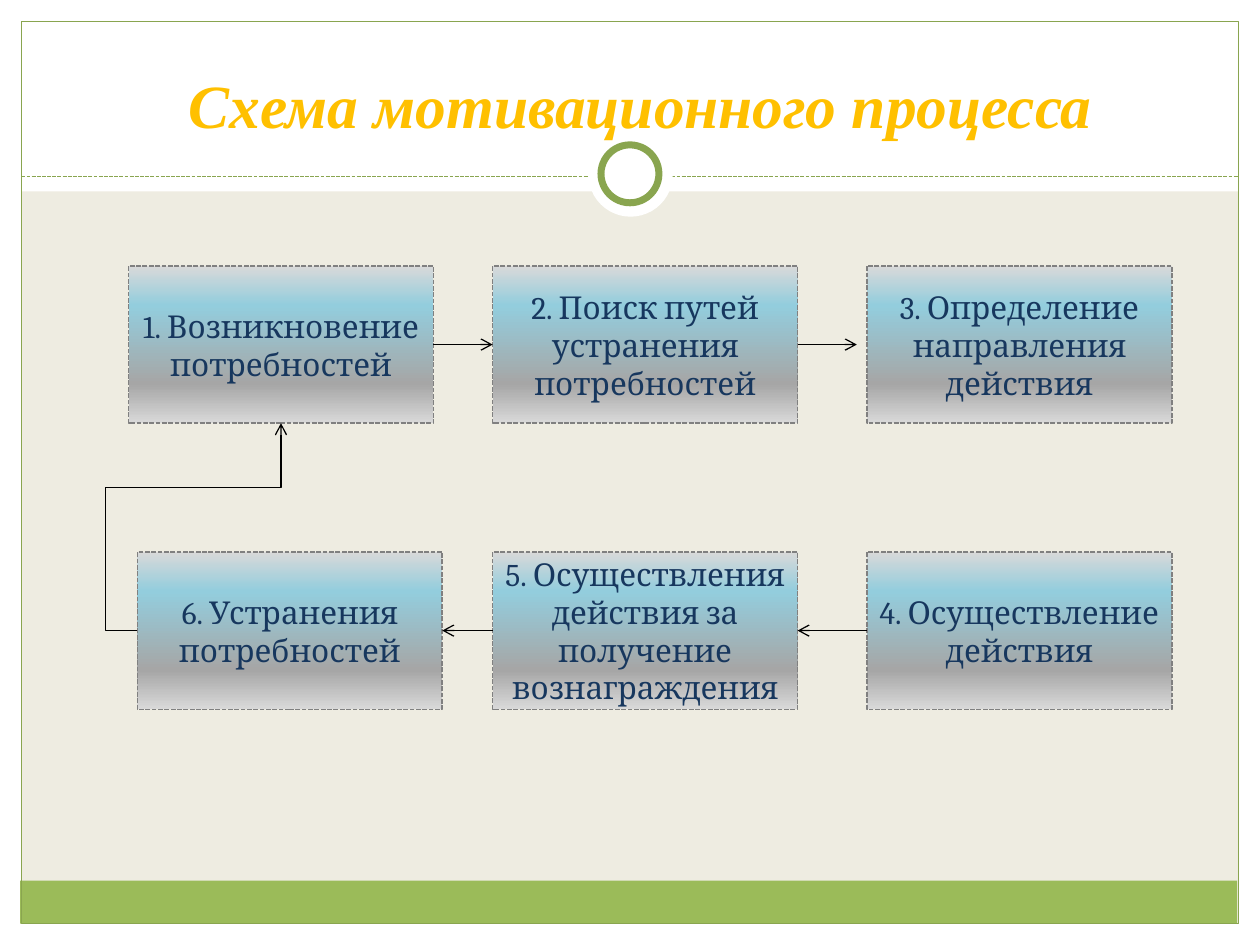
"""Build the slide with the six-step cycle of the motivation process."""
from lxml.etree import SubElement
from pptx import Presentation
from pptx.dml.color import RGBColor
from pptx.enum.dml import MSO_LINE
from pptx.enum.shapes import MSO_CONNECTOR as LINK, MSO_SHAPE as SHAPE
from pptx.enum.text import MSO_ANCHOR as ANCHOR, PP_ALIGN as ALIGN
from pptx.oxml import parse_xml
from pptx.oxml.ns import nsdecls, qn
from pptx.util import Inches, Pt

UNIT = Inches(0.1)
COLUMNS, ROWS = 100, 75
WHITE, GREEN, EDGE = "FFFFFF", "9BBB59", "89A54F"
BOX_W, BOX_H = 24.2, 12.5
LEFT, MIDDLE, RIGHT = 10.2, 39.1, 68.8
TOP, BOTTOM = 21.1, 43.8


def paint(target, colour):
    """Give a fill or a font a solid colour."""
    if hasattr(target, "solid"):
        target.solid()
        target.fore_color.rgb = RGBColor.from_string(colour)
    else:
        target.color.rgb = RGBColor.from_string(colour)


def add_panel(kind, cells, fill=None, edge=None, weight=0.75):
    """Add a preset shape at left, top, width and height in grid cells."""
    panel = slide.shapes.add_shape(kind, *[round(n * UNIT) for n in cells])
    panel.shadow.inherit = False
    for part, colour in ((panel.fill, fill), (panel.line.fill, edge)):
        if colour:
            paint(part, colour)
        else:
            part.background()
    if edge:
        panel.line.width = Pt(weight)
    return panel


deck = Presentation()
deck.slide_width, deck.slide_height = COLUMNS * UNIT, ROWS * UNIT
slide = deck.slides.add_slide(deck.slide_layouts[5])
paint(slide.background.fill, "EEECE1")

for cells, fill in (
    ((0, 73.3, COLUMNS, 1.7), WHITE),
    ((0, 0, COLUMNS, 15.2), WHITE),
    ((0, 0, 1.7, ROWS), WHITE),
    ((98.3, 0, 1.7, ROWS), WHITE),
    ((1.6, 69.9, 96.6, 3.4), GREEN),
):
    add_panel(SHAPE.RECTANGLE, cells, fill)
add_panel(SHAPE.RECTANGLE, (1.7, 1.7, 96.6, 71.6), edge=EDGE)

divider = slide.shapes.add_connector(
    LINK.STRAIGHT, *[round(n * UNIT) for n in (1.7, 14, 98.3, 14)])
paint(divider.line.fill, EDGE)
divider.line.width = Pt(0.75)
divider.line.dash_style = MSO_LINE.SQUARE_DOT
SubElement(divider._element.spPr, qn("a:effectLst"))
add_panel(SHAPE.OVAL, (46.7, 10.5, 6.7, 6.7), WHITE)
add_panel(SHAPE.OVAL, (47.7, 11.5, 4.6, 4.6), WHITE, EDGE, 4)

title = slide.shapes.title
title.left, title.top, title.width, title.height = [
    round(n * UNIT) for n in (5.5, 3.1, 90.6, 8.6)]
slide.shapes._spTree.append(title._element)
title.text_frame.vertical_anchor = ANCHOR.BOTTOM
heading = title.text_frame.paragraphs[0]
heading.alignment = ALIGN.CENTER
words = heading.add_run()
words.text = "Схема мотивационного процесса"
words.font.name, words.font.size = "Times New Roman", Pt(35.1)
words.font.bold = words.font.italic = True
paint(words.font, "FFC000")

stops = "".join(
    f'<a:gs pos="{share * 1000}"><a:srgbClr val="{colour}"/></a:gs>'
    for share, colour in ((0, "D9D9D9"), (25, "A6A6A6"), (75, "93CDDD"), (100, "D9D9D9")))
steps = []
for left, top, label in (
    (LEFT, TOP, "1. Возникновение потребностей"),
    (MIDDLE, TOP, "2. Поиск путей устранения потребностей"),
    (RIGHT, TOP, "3. Определение направления действия"),
    (RIGHT, BOTTOM, "4. Осуществление действия"),
    (MIDDLE, BOTTOM, "5. Осуществления действия за получение вознаграждения"),
    (LEFT + 0.7, BOTTOM, "6. Устранения потребностей"),
):
    step = add_panel(SHAPE.RECTANGLE, (left, top, BOX_W, BOX_H), WHITE, "808080", 0.9)
    step.line.dash_style = MSO_LINE.SQUARE_DOT
    properties = step._element.spPr
    properties.replace(properties.find(qn("a:solidFill")), parse_xml(
        f'<a:gradFill {nsdecls("a")} rotWithShape="1"><a:gsLst>{stops}</a:gsLst>'
        '<a:lin ang="16200000" scaled="0"/></a:gradFill>'))
    step.text_frame.word_wrap = True
    step.text_frame.vertical_anchor = ANCHOR.MIDDLE
    caption = step.text_frame.paragraphs[0]
    caption.alignment = ALIGN.CENTER
    words = caption.add_run()
    words.text = label
    words.font.name, words.font.size = "Cambria", Pt(18)
    paint(words.font, "17375E")
    steps.append(step)

need, search, aim, action, reward, relief = steps
for kind, source, source_side, target, target_side in (
    (LINK.STRAIGHT, need, 3, search, 1),
    (LINK.STRAIGHT, search, 3, aim, 1),
    (LINK.STRAIGHT, action, 1, reward, 3),
    (LINK.STRAIGHT, reward, 1, relief, 3),
    (LINK.ELBOW, relief, 1, need, 2),
):
    arrow = slide.shapes.add_connector(kind, 0, 0, 0, 0)
    arrow.begin_connect(source, source_side)
    if target is aim:
        arrow.end_x = aim.left - round(0.8 * UNIT)
        arrow.end_y = aim.top + aim.height // 2
    else:
        arrow.end_connect(target, target_side)
    paint(arrow.line.fill, "000000")
    arrow.line.width = Pt(0.75)
    SubElement(arrow.line._get_or_add_ln(), qn("a:tailEnd"), type="arrow")
    SubElement(arrow._element.spPr, qn("a:effectLst"))
    if kind == LINK.ELBOW:
        bend = arrow._element.spPr.find(qn("a:prstGeom"))
        bend.set("prst", "bentConnector4")
        for name, value in (("adj1", -22100), ("adj2", 69000)):
            SubElement(bend.find(qn("a:avLst")), qn("a:gd"), name=name, fmla=f"val {value}")

deck.save("out.pptx")
